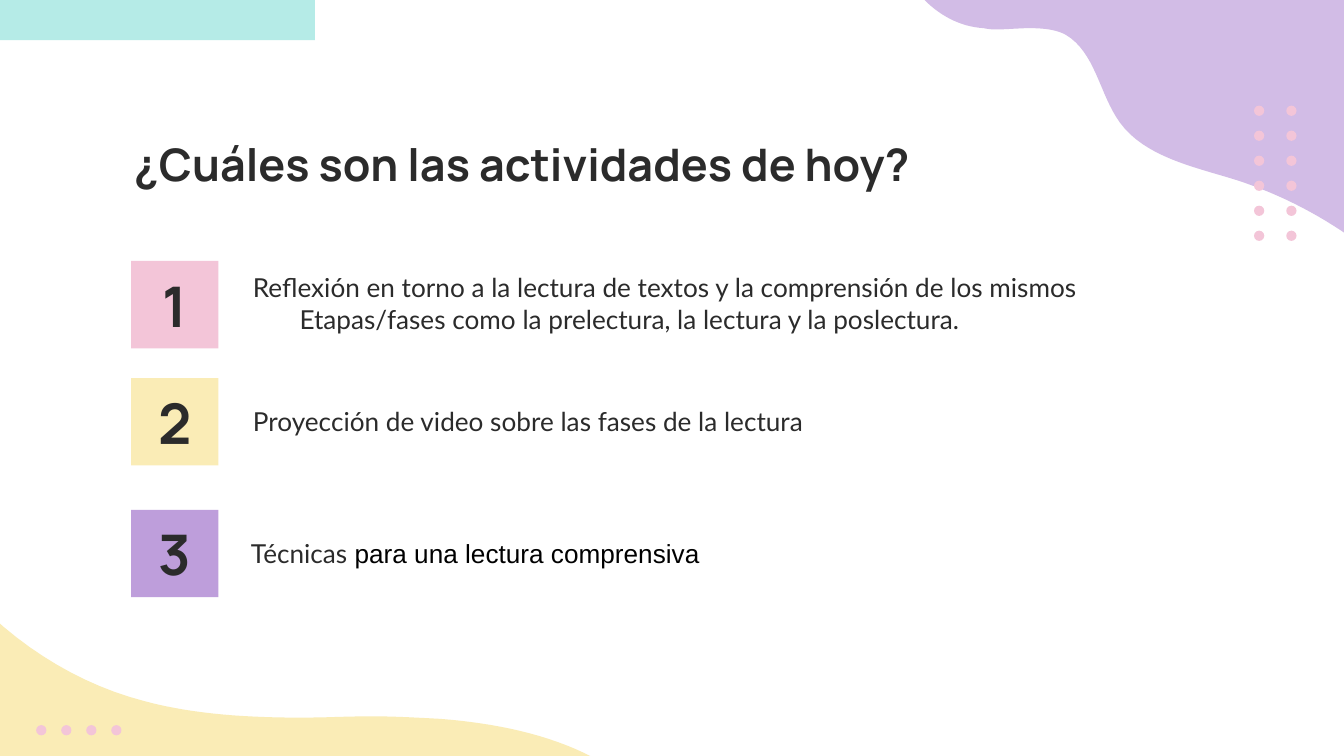
from pptx import Presentation
from pptx.dml.color import RGBColor
from pptx.enum.shapes import MSO_SHAPE
from pptx.enum.text import MSO_ANCHOR, MSO_AUTO_SIZE, PP_ALIGN
from pptx.util import Pt

INK = RGBColor(0x2B, 0x2B, 0x2B)
BLACK = RGBColor(0x00, 0x00, 0x00)
MINT = RGBColor(0xB5, 0xEB, 0xE7)
YELLOW = RGBColor(0xFA, 0xEC, 0xB6)
PINK = RGBColor(0xF3, 0xC5, 0xD8)
LILAC = RGBColor(0xD2, 0xBC, 0xE6)
PURPLE = RGBColor(0xBE, 0x9E, 0xDB)

DOT_SIZE, DOT_PITCH = 5.5, 13.4
BADGE_LEFT, BADGE_SIZE = 70.2, 46.8
BADGES = [("1", 139.8, PINK), ("2", 202.5, YELLOW), ("3", 273.1, PURPLE)]

YELLOW_CORNER = [(-33.1, 298.1), (-33.1, 547.9), (318.2, 547.9), (318.2, 406.1)]
YELLOW_WAVE = [
    ((293.8, 393.1), (264.2, 387.4), (236.2, 385.2)),
    ((223.9, 384.5), (211, 383.8), (198.7, 383.8)),
    ((186.5, 383.8), (174.2, 384.5), (162, 384.5)),
    ((133.9, 384.5), (105.1, 383), (77.8, 375.8)),
    ((33.1, 364.3), (-5.8, 335.5), (-33.1, 298.1)),
]
LILAC_CORNER = [(730.1, 131.8), (730.1, -47.5), (493.9, -47.5), (493.9, -1.4)]
LILAC_WAVE = [
    ((502.6, 7.9), (514.1, 14.4), (527, 15.1)),
    ((529.2, 15.6), (531.4, 15.8), (532.8, 15.8)),
    ((539.3, 15.8), (545.8, 15.1), (551.5, 15.1)),
    ((558.7, 15.1), (565.9, 15.8), (571, 18.7)),
    ((586.8, 28.1), (589, 50.4), (599.8, 65.5)),
    ((613.4, 84.2), (639.4, 89.3), (662.4, 96.5)),
    ((686.9, 104.4), (709.9, 116.6), (730.1, 131.8)),
]


def bezier(start, c1, c2, end, steps=16):
    """Return the points along a cubic curve, without its start."""
    points = []
    for i in range(1, steps + 1):
        t = i / steps
        u = 1 - t
        points.append(tuple(
            u**3 * a + 3 * u * u * t * b + 3 * u * t * t * c + t**3 * d
            for a, b, c, d in zip(start, c1, c2, end)))
    return points


class SlideBuilder:
    """Draws the elements of one slide in a shared style."""

    def __init__(self, s, heading_font="Manrope", body_font="Lato"):
        self.s = s
        self.heading_font = heading_font
        self.body_font = body_font

    def paint(self, sp, color):
        sp.shadow.inherit = False
        sp.fill.solid()
        sp.fill.fore_color.rgb = color
        sp.line.fill.background()
        return sp

    def shape(self, kind, x, y, w, h, color):
        sp = self.s.shapes.add_shape(kind, Pt(x), Pt(y), Pt(w), Pt(h))
        return self.paint(sp, color)

    def wave(self, corner, curves, color):
        points = list(corner)
        for curve in curves:
            points += bezier(points[-1], *curve)
        points = [(Pt(x), Pt(y)) for x, y in points]
        builder = self.s.shapes.build_freeform(*points[0])
        builder.add_line_segments(points[1:], close=True)
        self.paint(builder.convert_to_shape(), color)

    def dots(self, x, y, columns, rows, x_pitch=DOT_PITCH):
        for column in range(columns):
            for row in range(rows):
                self.shape(MSO_SHAPE.OVAL, x + column * x_pitch,
                           y + row * DOT_PITCH, DOT_SIZE, DOT_SIZE, PINK)

    def set_text(self, sp, text, size, font, bold=False, align=PP_ALIGN.LEFT,
                 anchor=MSO_ANCHOR.TOP, inset=7.2):
        tf = sp.text_frame
        tf.word_wrap = True
        tf.vertical_anchor = anchor
        tf.margin_left = tf.margin_right = Pt(7.2)
        tf.margin_top = tf.margin_bottom = Pt(inset)
        p = tf.paragraphs[0]
        p.alignment = align
        p.font.size = Pt(size)
        p.font.name = font
        p.font.bold = bold
        p.font.color.rgb = INK
        p.add_run().text = text
        return p

    def title(self, text, x, y, w, h):
        sp = self.s.shapes.add_textbox(Pt(x), Pt(y), Pt(w), Pt(h))
        self.set_text(sp, text, 24, self.heading_font, bold=True)

    def badge(self, number, y, color):
        sp = self.shape(MSO_SHAPE.RECTANGLE, BADGE_LEFT, y,
                        BADGE_SIZE, BADGE_SIZE, color)
        self.set_text(sp, number, 30, self.heading_font, bold=True,
                      align=PP_ALIGN.CENTER, anchor=MSO_ANCHOR.MIDDLE)

    def body(self, text, x, y, w, h, hanging=False, **style):
        sp = self.s.shapes.add_textbox(Pt(x), Pt(y), Pt(w), Pt(h))
        p = self.set_text(sp, text, 14, self.body_font, **style)
        if hanging:
            pPr = p._p.get_or_add_pPr()
            pPr.set("marL", str(Pt(36)))
            pPr.set("indent", str(Pt(-25)))
        return sp


def main():
    prs = Presentation()
    prs.slide_width, prs.slide_height = Pt(720), Pt(405)
    s = SlideBuilder(prs.slides.add_slide(prs.slide_layouts[6]))

    s.shape(MSO_SHAPE.RECTANGLE, 0, 0, 168.7, 21.5, MINT)
    s.wave(YELLOW_CORNER, YELLOW_WAVE, YELLOW)
    s.dots(19.4, 388.5, columns=4, rows=1)
    s.wave(LILAC_CORNER, LILAC_WAVE, LILAC)
    s.dots(671.8, 56.6, columns=2, rows=6, x_pitch=17.3)

    s.title("¿Cuáles son las actividades de hoy?", 64.8, 66.2, 462.2, 40.3)
    for number, y, color in BADGES:
        s.badge(number, y, color)

    s.body("Reflexión en torno a la lectura de textos y la comprensión de los "
           "mismos Etapas/fases como la prelectura, la lectura y la poslectura.",
           117.4, 157.7, 501.1, 28.8, hanging=True, anchor=MSO_ANCHOR.BOTTOM)
    s.body("Proyección de video sobre las fases de la lectura",
           117.4, 210.2, 472.3, 38.2, hanging=True, align=PP_ALIGN.JUSTIFY)
    sp = s.body("Técnicas", 127.4, 284.4, 381.6, 24.5,
                align=PP_ALIGN.JUSTIFY, inset=3.6)
    sp.text_frame.auto_size = MSO_AUTO_SIZE.SHAPE_TO_FIT_TEXT
    r = sp.text_frame.paragraphs[0].add_run()
    r.text = " para una lectura comprensiva"
    r.font.name = "Arial"
    r.font.color.rgb = BLACK

    prs.save("out.pptx")


if __name__ == "__main__":
    main()
